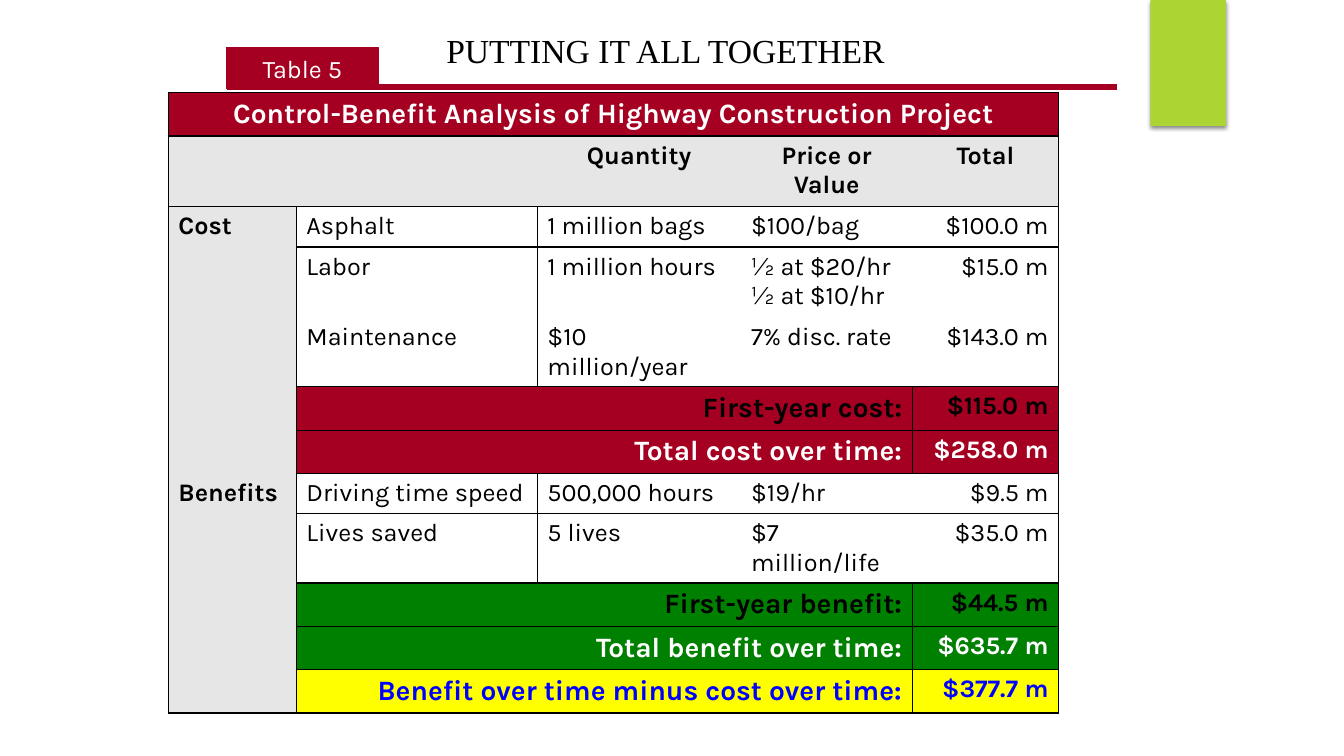
import lxml.etree
import pptx
import pptx.dml.color
import pptx.enum.shapes
import pptx.enum.text
import pptx.oxml.ns
import pptx.util

Inches = pptx.util.Inches
Pt = pptx.util.Pt
Align = pptx.enum.text.PP_ALIGN
qn = pptx.oxml.ns.qn

RED, GREEN, GREY, YELLOW = "A50021", "008000", "E6E6E6", "FFFF00"
BLACK, WHITE, BLUE, LIME = "000000", "FFFFFF", "0000FF", "ACD433"
NO_STYLE = "{2D5ABB26-0587-4C30-8999-92F81FD0307C}"

COLUMN_WIDTHS = [1.27, 2.39, 2.02, 1.7, 1.45]
ROW_HEIGHTS = [0.43, 0.7, 0.4, 0.7, 0.4, 0.43, 0.43, 0.4, 0.4, 0.43, 0.43, 0.43]
RULED_ROWS = (2, 5, 7, 9, 11)
HEADINGS = ["Quantity", "Price or Value", "Total"]
ITEMS = {
    2: ["Asphalt", "1 million bags", "$100/bag", "$100.0 m"],
    3: ["Labor", "1 million hours", "½ at $20/hr\n½ at $10/hr", "$15.0 m"],
    4: ["Maintenance", "$10 million/year", "7% disc. rate", "$143.0 m"],
    7: ["Driving time speed", "500,000 hours", "$19/hr", "$9.5 m"],
    8: ["Lives saved", "5 lives", "$7 million/life", "$35.0 m"],
}
SUMMARIES = {
    5: ("First-year cost:", "$115.0 m", RED, 50, BLACK),
    6: ("Total cost over time:", "$258.0 m", RED, 100, WHITE),
    9: ("First-year benefit:", "$44.5 m", GREEN, 50, BLACK),
    10: ("Total benefit over time:", "$635.7 m", GREEN, 100, WHITE),
    11: ("Benefit over time minus cost over time:", "$377.7 m", YELLOW, 100, BLUE),
}


def rgb(value):
    return pptx.dml.color.RGBColor.from_string(value)


def write(frame, text, size=18, color=BLACK, bold=False, align=Align.LEFT, font="Karla"):
    for index, line in enumerate(text.split("\n")):
        paragraph = frame.paragraphs[0] if index == 0 else frame.add_paragraph()
        paragraph.alignment = align
        run = paragraph.add_run()
        run.text = line
        run.font.name = font
        run.font.size = Pt(size)
        run.font.bold = bold
        run.font.color.rgb = rgb(color)


def fill_cell(cell, color, opacity=100):
    cell.fill.solid()
    cell.fill.fore_color.rgb = rgb(color)
    if opacity < 100:
        color_element = cell._tc.tcPr.find(".//" + qn("a:srgbClr"))
        lxml.etree.SubElement(color_element, qn("a:alpha"), val=str(opacity * 1000))


def add_borders(cell, sides):
    properties = cell._tc.get_or_add_tcPr()
    for side in sides:
        line = lxml.etree.SubElement(properties, qn("a:ln" + side), w=str(Pt(1)))
        fill = lxml.etree.SubElement(line, qn("a:solidFill"))
        lxml.etree.SubElement(fill, qn("a:srgbClr"), val=BLACK)


def border_sides(cell, row, column):
    last_row = len(ROW_HEIGHTS) - 1
    last_column = len(COLUMN_WIDTHS) - 1
    ruled = {
        "L": column == 0 or (column == 1 and row >= 2),
        "R": column + cell.span_width - 1 == last_column or (column == 0 and row == last_row),
        "T": row < 2 or (column > 0 and row in RULED_ROWS),
        "B": row in (0, last_row) or (column > 0 and row + 1 in RULED_ROWS),
    }
    return [side for side, shown in ruled.items() if shown]


def add_analysis_table(slide):
    frame = slide.shapes.add_table(
        len(ROW_HEIGHTS), len(COLUMN_WIDTHS), Inches(1.67), Inches(0.92),
        Inches(sum(COLUMN_WIDTHS)), Inches(sum(ROW_HEIGHTS)))
    table = frame.table
    table.first_row = table.horz_banding = False
    table._tbl.tblPr.find(qn("a:tableStyleId")).text = NO_STYLE
    for column, width in zip(table.columns, COLUMN_WIDTHS):
        column.width = Inches(width)
    for row, height in zip(table.rows, ROW_HEIGHTS):
        row.height = Inches(height)

    table.cell(0, 0).merge(table.cell(0, 4))
    table.cell(2, 0).merge(table.cell(4, 0))
    table.cell(7, 0).merge(table.cell(8, 0))
    for row in SUMMARIES:
        table.cell(row, 1).merge(table.cell(row, 3))

    for row in range(len(ROW_HEIGHTS)):
        for column in range(len(COLUMN_WIDTHS)):
            cell = table.cell(row, column)
            if cell.is_spanned:
                continue
            add_borders(cell, border_sides(cell, row, column))
            if row == 0:
                fill_cell(cell, RED)
            elif row == 1 or column == 0:
                fill_cell(cell, GREY)
            elif row in SUMMARIES:
                fill_cell(cell, *SUMMARIES[row][2:4])
            else:
                cell.fill.background()

    write(table.cell(0, 0).text_frame, "Control-Benefit Analysis of Highway Construction Project",
          20, WHITE, True, Align.CENTER)
    for column, heading in enumerate(HEADINGS, 2):
        write(table.cell(1, column).text_frame, heading, bold=True, align=Align.CENTER)
    for row, section in ((2, "Cost"), (7, "Benefits")):
        write(table.cell(row, 0).text_frame, section, bold=True)
    for row, values in ITEMS.items():
        for column, value in enumerate(values, 1):
            align = Align.RIGHT if column == 4 else Align.LEFT
            write(table.cell(row, column).text_frame, value, align=align)
    for row, (label, total, _, _, color) in SUMMARIES.items():
        write(table.cell(row, 1).text_frame, label, 20, color, True, Align.RIGHT)
        write(table.cell(row, 4).text_frame, total, 18, color, True, Align.RIGHT)


def add_rectangle(slide, left, top, width, height, color):
    shape = slide.shapes.add_shape(
        pptx.enum.shapes.MSO_SHAPE.RECTANGLE,
        Inches(left), Inches(top), Inches(width), Inches(height))
    shape.shadow.inherit = False
    shape.fill.solid()
    shape.fill.fore_color.rgb = rgb(color)
    shape.line.fill.background()
    return shape


def add_shadow(shape):
    effects = shape._element.spPr.find(qn("a:effectLst"))
    shadow = lxml.etree.SubElement(
        effects, qn("a:outerShdw"), blurRad=str(Pt(3)), dist=str(Pt(2)),
        dir="5400000", rotWithShape="0")
    color = lxml.etree.SubElement(shadow, qn("a:srgbClr"), val=BLACK)
    lxml.etree.SubElement(color, qn("a:alpha"), val="45000")


def add_table_label(slide):
    label = add_rectangle(slide, 2.25, 0.47, 1.5, 0.41, RED)
    label.line.color.rgb = rgb(RED)
    label.line.width = Pt(0.75)
    frame = label.text_frame
    frame.margin_left = frame.margin_right = 0
    frame.vertical_anchor = pptx.enum.text.MSO_ANCHOR.MIDDLE
    write(frame, "Table 5", color=WHITE, align=Align.CENTER)


def add_rule(slide):
    rule = slide.shapes.add_connector(
        pptx.enum.shapes.MSO_CONNECTOR.STRAIGHT,
        Inches(2.25), Inches(0.86), Inches(11.08), Inches(0.86))
    rule.line.color.rgb = rgb(RED)
    rule.line.width = Pt(4.5)
    lxml.etree.SubElement(rule._element.spPr, qn("a:effectLst"))


def set_title(slide):
    title = slide.shapes.title
    title.left, title.top = Inches(4.24), Inches(0.25)
    title.width, title.height = Inches(4.72), Inches(0.5)
    frame = title.text_frame
    frame.word_wrap = False
    frame.auto_size = pptx.enum.text.MSO_AUTO_SIZE.NONE
    frame.vertical_anchor = pptx.enum.text.MSO_ANCHOR.MIDDLE
    write(frame, "PUTTING IT ALL TOGETHER", 24, align=Align.CENTER, font="Times New Roman")


def main():
    presentation = pptx.Presentation()
    presentation.slide_width = Inches(13.33)
    presentation.slide_height = Inches(7.5)
    slide = presentation.slides.add_slide(presentation.slide_layouts[5])
    add_shadow(add_rectangle(slide, 11.41, 0, 0.75, 1.25, LIME))
    add_analysis_table(slide)
    add_table_label(slide)
    add_rule(slide)
    set_title(slide)
    presentation.save("out.pptx")


if __name__ == "__main__":
    main()
